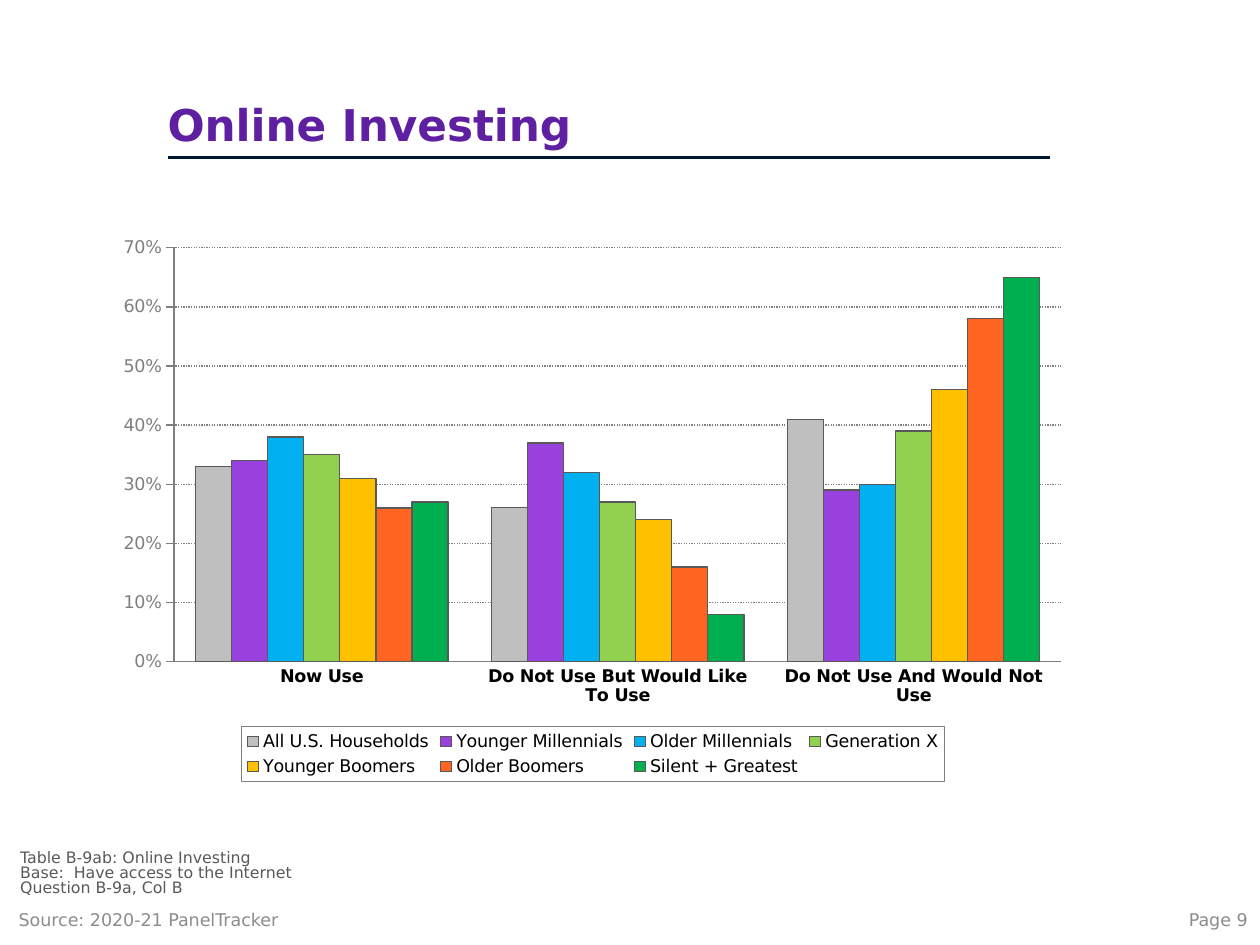
from dataclasses import dataclass

from pptx import Presentation
from pptx.chart.data import CategoryChartData
from pptx.dml.color import RGBColor
from pptx.enum.chart import XL_CHART_TYPE, XL_LEGEND_POSITION, XL_TICK_MARK
from pptx.enum.dml import MSO_LINE
from pptx.enum.shapes import MSO_CONNECTOR
from pptx.enum.text import MSO_ANCHOR, PP_ALIGN
from pptx.oxml import parse_xml
from pptx.oxml.ns import nsdecls, qn
from pptx.util import Inches, Pt

COLUMNS = XL_CHART_TYPE.COLUMN_CLUSTERED
LEGEND_BOTTOM = XL_LEGEND_POSITION.BOTTOM
TICK_NONE, TICK_OUTSIDE = XL_TICK_MARK.NONE, XL_TICK_MARK.OUTSIDE
DOTTED = MSO_LINE.ROUND_DOT
STRAIGHT = MSO_CONNECTOR.STRAIGHT
MIDDLE, BOTTOM = MSO_ANCHOR.MIDDLE, MSO_ANCHOR.BOTTOM
LEFT, RIGHT = PP_ALIGN.LEFT, PP_ALIGN.RIGHT

FONT = "DejaVu Sans"
COLORS = {
    "title": "5E20A0",
    "rule": "00192F",
    "footer": "8C8C8C",
    "note": "595959",
    "axis": "7F7F7F",
    "text": "000000",
    "outline": "595959",
}
CATEGORIES = [
    "Now Use",
    "Do Not Use But Would Like To Use",
    "Do Not Use And Would Not Use",
]


@dataclass(frozen=True)
class Generation:
    name: str
    shares: tuple[float, ...]
    color: str
    outline: float = 0.75


GENERATIONS = [
    Generation("All U.S. Households", (0.33, 0.26, 0.41), "BFBFBF", 0.5),
    Generation("Younger Millennials", (0.34, 0.37, 0.29), "9941DD"),
    Generation("Older Millennials", (0.38, 0.32, 0.30), "00B0F0"),
    Generation("Generation X", (0.35, 0.27, 0.39), "92D050"),
    Generation("Younger Boomers", (0.31, 0.24, 0.46), "FFC000"),
    Generation("Older Boomers", (0.26, 0.16, 0.58), "FF6521"),
    Generation("Silent + Greatest", (0.27, 0.08, 0.65), "00B050"),
]


def rgb(name: str) -> RGBColor:
    return RGBColor.from_string(COLORS[name])


def style_font(font, size: float, color: str, bold: bool = False) -> None:
    font.name = FONT
    font.size = Pt(size)
    font.bold = bold
    font.color.rgb = rgb(color)


def style_line(line, color: str, width: float) -> None:
    line.color.rgb = rgb(color)
    line.width = Pt(width)


def add_text(page, text: str, *, at: tuple[float, ...], size: float, color: str,
             bold: bool = False, anchor=MIDDLE, align=LEFT, spacing: float = 1.0,
             insets: tuple[float, float] = (0.1, 0.05)) -> None:
    box = page.shapes.add_textbox(*map(Inches, at))
    frame = box.text_frame
    frame.word_wrap = True
    frame.vertical_anchor = anchor
    frame.margin_left = frame.margin_right = Inches(insets[0])
    frame.margin_top = frame.margin_bottom = Inches(insets[1])
    frame.text = text
    for para in frame.paragraphs:
        para.alignment = align
        para.line_spacing = spacing
        for span in para.runs:
            style_font(span.font, size, color, bold)


def add_rule(page) -> None:
    rule = page.shapes.add_connector(
        STRAIGHT, Inches(1.33), Inches(1.25), Inches(8.33), Inches(1.25))
    style_line(rule.line, "rule", 2)
    rule._element.spPr.append(parse_xml(f"<a:effectLst {nsdecls('a')}/>"))


def set_layout(element, index: int, area: tuple[float, ...], target: str = "") -> None:
    for old in element.findall(qn("c:layout")):
        element.remove(old)
    modes = '<c:xMode val="edge"/><c:yMode val="edge"/>'
    sizes = "".join(f'<c:{key} val="{value}"/>' for key, value in zip("xywh", area))
    element.insert(index, parse_xml(
        f"<c:layout {nsdecls('c')}><c:manualLayout>{target}{modes}{sizes}"
        "</c:manualLayout></c:layout>"))


def style_axes(chart) -> None:
    category_axis, value_axis = chart.category_axis, chart.value_axis
    category_axis.major_tick_mark = TICK_NONE
    value_axis.major_tick_mark = TICK_OUTSIDE
    style_font(category_axis.tick_labels.font, 10, "text", bold=True)
    style_font(value_axis.tick_labels.font, 10, "axis")
    value_axis.minimum_scale, value_axis.maximum_scale = 0, 0.7
    value_axis.major_unit = 0.1
    value_axis.tick_labels.number_format = "0%"
    value_axis.tick_labels.number_format_is_linked = False
    grid = value_axis.major_gridlines.format.line
    for line in (category_axis.format.line, value_axis.format.line, grid):
        style_line(line, "axis", 0.75)
    grid.dash_style = DOTTED


def style_legend(chart) -> None:
    chart.has_legend = True
    legend = chart.legend
    legend.position = LEGEND_BOTTOM
    legend.include_in_layout = False
    style_font(legend.font, 10, "text")
    element = legend._element
    set_layout(element, 1, (0.14, 0.9, 0.72, 0.1))
    element.find(qn("c:overlay")).addnext(parse_xml(
        f"<c:spPr {nsdecls('c', 'a')}><a:ln w=\"{Pt(0.75)}\"><a:solidFill>"
        f"<a:srgbClr val=\"{COLORS['axis']}\"/></a:solidFill></a:ln></c:spPr>"))


def add_usage_chart(page) -> None:
    data = CategoryChartData(number_format="0%")
    data.categories = CATEGORIES
    for generation in GENERATIONS:
        data.add_series(generation.name, generation.shares)
    chart = page.shapes.add_chart(
        COLUMNS, Inches(0.83), Inches(1.81), Inches(7.75), Inches(4.4), data).chart
    chart.has_title = False
    style_font(chart.font, 10, "text")
    plot = chart.plots[0]
    plot.gap_width, plot.overlap = 120, 0
    plot.vary_by_categories = False
    for series, generation in zip(plot.series, GENERATIONS):
        series.format.fill.solid()
        series.format.fill.fore_color.rgb = RGBColor.from_string(generation.color)
        style_line(series.format.line, "outline", generation.outline)
    style_axes(chart)
    style_legend(chart)
    plot_area = chart._chartSpace.find(f".//{qn('c:plotArea')}")
    set_layout(plot_area, 0, (0.071, 0.036, 0.909, 0.747),
               '<c:layoutTarget val="inner"/>')


def main() -> None:
    deck = Presentation()
    deck.slide_width, deck.slide_height = Inches(10), Inches(7.5)
    page = deck.slides.add_slide(deck.slide_layouts[6])
    add_rule(page)
    add_text(page, "Online Investing", at=(1.33, 0.4, 7, 0.85), size=25, color="title",
             bold=True, anchor=BOTTOM, spacing=0.9, insets=(0, 0.05))
    add_text(page, "Source: 2020-21 PanelTracker", at=(0.05, 7.1, 3.33, 0.4),
             size=10, color="footer")
    add_text(page, "Table B-9ab: Online Investing\nBase:  Have access to the Internet\n"
             "Question B-9a, Col B", at=(0.16, 6.76, 9.71, 0.36), size=9, color="note",
             anchor=BOTTOM, spacing=0.8, insets=(0, 0))
    add_text(page, "Page 9", at=(7.75, 7.1, 2.25, 0.4), size=10, color="footer",
             align=RIGHT)
    add_usage_chart(page)
    deck.save("out.pptx")


if __name__ == "__main__":
    main()
